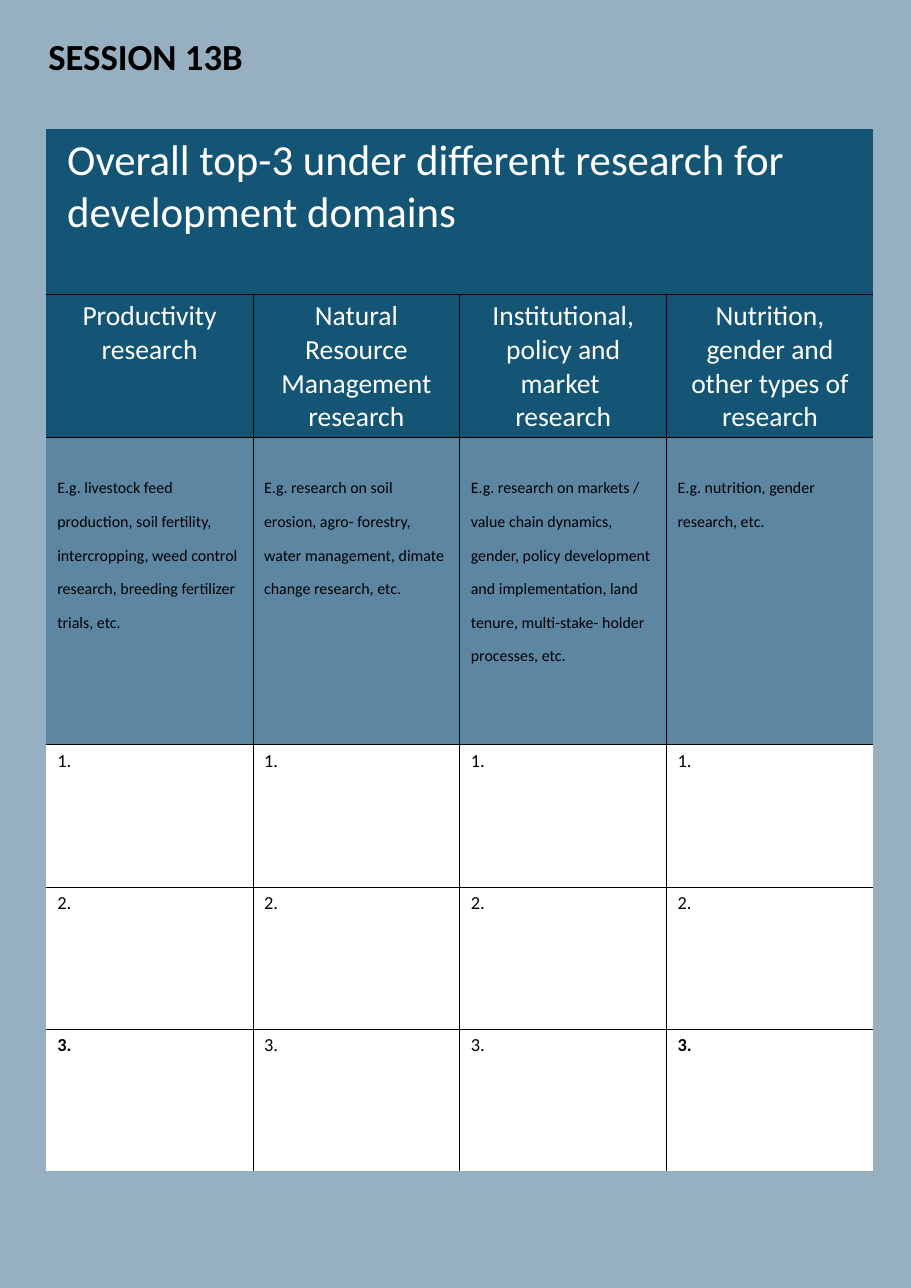
import pptx
import pptx.dml.color
import pptx.enum.text
import pptx.oxml
import pptx.oxml.ns
import pptx.util

Inches = pptx.util.Inches
BLACK, WHITE, NAVY, STEEL, SKY = "000000", "FFFFFF", "145576", "5D86A3", "96B0C1"


def color(hex_value):
    return pptx.dml.color.RGBColor.from_string(hex_value)


def set_borders(cell, visible_sides):
    """Draw thin black lines on the given sides (letters of LRTB) and none elsewhere."""
    for side in "LRTB":
        fill = "<a:noFill/>"
        if side in visible_sides:
            fill = f'<a:solidFill><a:srgbClr val="{BLACK}"/></a:solidFill>'
        line = f'<a:ln{side} {pptx.oxml.ns.nsdecls("a")} w="6350">{fill}</a:ln{side}>'
        cell._tc.get_or_add_tcPr().append(pptx.oxml.parse_xml(line))


title = "Overall top-3 under different research for\ndevelopment domains"
domains = [
    "Productivity research",
    "Natural Resource Management research",
    "Institutional, policy and market \nresearch",
    "Nutrition, gender and other types of research",
]
examples = [
    "E.g. livestock feed production, soil fertility, intercropping, weed control "
    "research, breeding fertilizer trials, etc.",
    "E.g. research on soil erosion, agro- forestry, water management, dimate "
    "change research, etc.",
    "E.g. research on markets / value chain dynamics, gender, policy development "
    "and implementation, land tenure, multi-stake- holder processes, etc.",
    "E.g. nutrition, gender research, etc.",
]
# Each row: texts, height, font size, text colour, fill
rows = [
    ([title, "", "", ""], 1.5, 28, WHITE, NAVY),
    (domains, 1.3, 18, WHITE, NAVY),
    (examples, 2.79, 18, BLACK, STEEL),
]
rows += [([f"{rank}."] * 4, 1.29, 12, BLACK, WHITE) for rank in (1, 2, 3)]
last_row, last_column = len(rows) - 1, len(domains) - 1

presentation = pptx.Presentation()
presentation.slide_width = Inches(8.27)
presentation.slide_height = Inches(11.69)
slide = presentation.slides.add_slide(presentation.slide_layouts[6])
slide.background.fill.solid()
slide.background.fill.fore_color.rgb = color(SKY)

session_box = slide.shapes.add_textbox(Inches(0.34), Inches(0.26), Inches(7.58), Inches(0.5))
session_box.text_frame.word_wrap = True
paragraph = session_box.text_frame.paragraphs[0]
paragraph.text = "SESSION 13B"
paragraph.font.name = "Calibri"
paragraph.font.size = pptx.util.Pt(24)
paragraph.font.bold = True
paragraph.font.color.rgb = color(BLACK)

table = slide.shapes.add_table(
    len(rows), len(domains), Inches(0.42), Inches(1.17),
    Inches(7.51), Inches(sum(row[1] for row in rows))).table
table.first_row = False
table.horz_banding = False
table.cell(0, 0).merge(table.cell(0, last_column))

for row_index, (texts, height, size, text_color, fill_color) in enumerate(rows):
    table.rows[row_index].height = Inches(height)
    for column_index, text in enumerate(texts):
        cell = table.cell(row_index, column_index)
        sides = "T" * (row_index > 0) + "B" * (row_index < last_row)
        if row_index > 0:
            sides += "L" * (column_index > 0) + "R" * (column_index < last_column)
        set_borders(cell, sides)
        cell.fill.solid()
        cell.fill.fore_color.rgb = color(fill_color)
        cell.margin_left = Inches(0.19 if row_index == 0 else 0.1)
        cell.margin_top = Inches(0.35 if texts is examples else 0.05)
        cell.margin_bottom = Inches(0.03)
        cell.text = text
        for paragraph in cell.text_frame.paragraphs:
            if texts is domains:
                paragraph.alignment = pptx.enum.text.PP_ALIGN.CENTER
            paragraph.font.name = "Calibri"
            paragraph.font.size = pptx.util.Pt(size)
            paragraph.font.color.rgb = color(text_color)
            paragraph.font.bold = row_index == last_row and column_index in (0, last_column)
            if texts is examples:
                for run in paragraph.runs:
                    run._r.get_or_add_rPr().set("baseline", "30000")

presentation.save("out.pptx")
